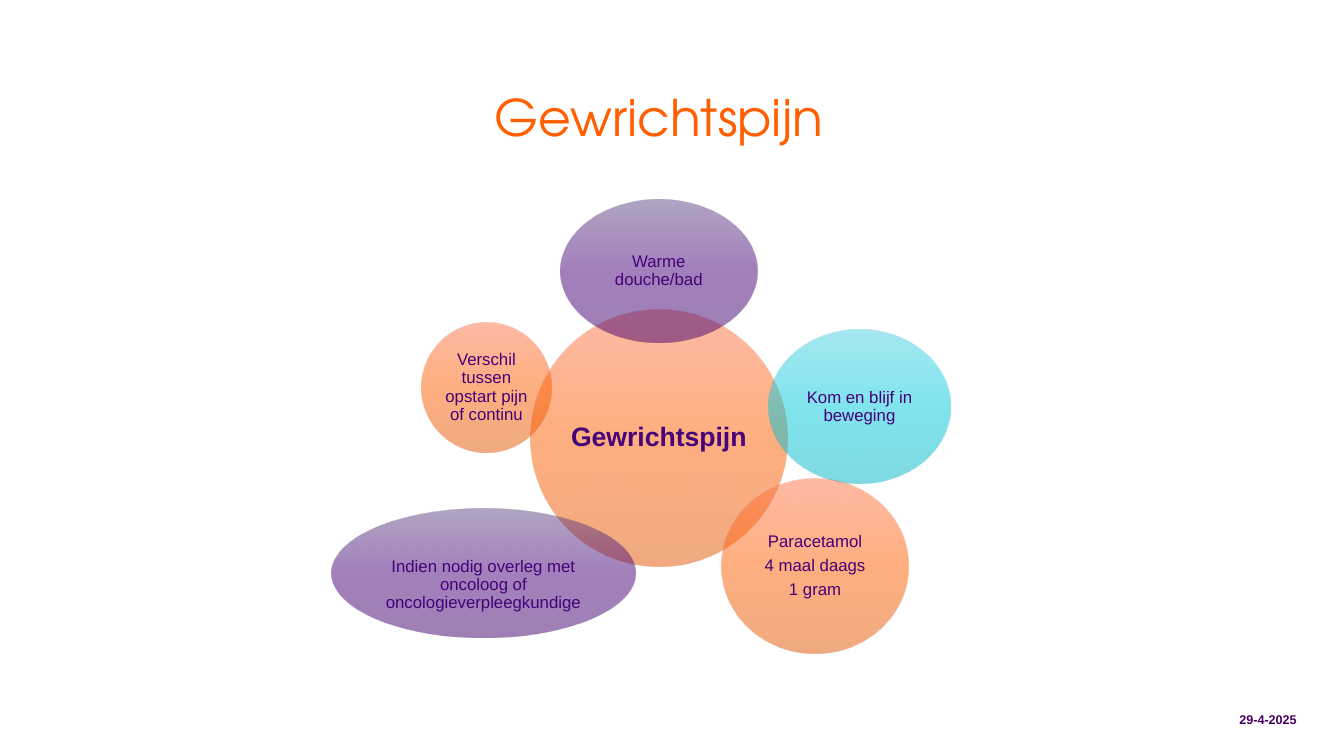
from lxml import etree
from pptx import Presentation
from pptx.dml.color import RGBColor
from pptx.enum.shapes import MSO_SHAPE
from pptx.enum.text import MSO_ANCHOR, PP_ALIGN
from pptx.oxml.ns import qn
from pptx.util import Inches, Pt

OVAL = MSO_SHAPE.OVAL
MIDDLE, TOP = MSO_ANCHOR.MIDDLE, MSO_ANCHOR.TOP
CENTER, RIGHT = PP_ALIGN.CENTER, PP_ALIGN.RIGHT

TITLE_ORANGE = RGBColor(0xFF, 0x5F, 0x00)
DATE_PURPLE = RGBColor(0x46, 0x00, 0x64)
TEXT_PURPLE = RGBColor(0x46, 0x00, 0x78)

# Gradient colours from top to bottom
ORANGE = (RGBColor(0xFF, 0x74, 0x4B), TITLE_ORANGE, RGBColor(0xE3, 0x54, 0x00))
PURPLE = (RGBColor(0x62, 0x4B, 0x88), TEXT_PURPLE, RGBColor(0x3E, 0x00, 0x6B))
CYAN = (RGBColor(0x4B, 0xD2, 0xE4), RGBColor(0x00, 0xCB, 0xDE), RGBColor(0x00, 0xB4, 0xC5))

SLIDE_W, SLIDE_H = 13.33, 7.5
BODY_FONT, TITLE_FONT = "Arial", "TeX Gyre Adventor"

# Circles around the centre: offset of the middle from the hub, size, colours, lines, top inset
HUB_SIZE = 2.55
ADVICE = [
    (0, -1.66, 1.95, 1.42, PURPLE, ["Warme douche/bad"], 0.02),
    (1.99, -0.31, 1.81, 1.53, CYAN, ["Kom en blijf in beweging"], 0.02),
    (1.55, 1.27, 1.86, 1.73, ORANGE, ["Paracetamol", "4 maal daags", "1 gram"], 0.02),
    (-1.74, 1.34, 3.02, 1.28, PURPLE,
     ["Indien nodig overleg met oncoloog of oncologieverpleegkundige"], 0.26),
    (-1.71, -0.5, 1.28, 1.28, ORANGE, ["Verschil tussen opstart pijn of continu"], 0.02),
]


def style_paragraph(paragraph, font_name, size, color, align, bold=False):
    paragraph.alignment = align
    font = paragraph.font
    font.name, font.size, font.bold = font_name, Pt(size), bold
    font.color.rgb = color


def add_label(slide, box, text, anchor, *style):
    label = slide.shapes.add_textbox(*map(Inches, box))
    frame = label.text_frame
    frame.word_wrap = True
    frame.vertical_anchor = anchor
    paragraph = frame.paragraphs[0]
    paragraph.text = text
    style_paragraph(paragraph, *style)
    return paragraph


def fill_translucent_gradient(shape, colors):
    shape.fill.gradient()
    shape.fill.gradient_angle = 270
    stops = shape.fill._fill._gradFill.find(qn("a:gsLst"))
    for stop in list(stops):
        stops.remove(stop)
    for index, color in enumerate(colors):
        stop = etree.SubElement(stops, qn("a:gs"), pos=str(index * 50000))
        rgb = etree.SubElement(stop, qn("a:srgbClr"), val=str(color))
        etree.SubElement(rgb, qn("a:alpha"), val="50000")


def add_circle(slide, center, size, colors, lines, font_size, inset, top_inset, bold=False):
    (x, y), (width, height) = center, size
    circle = slide.shapes.add_shape(
        OVAL, Inches(x - width / 2), Inches(y - height / 2), Inches(width), Inches(height))
    circle.shadow.inherit = False
    circle.line.fill.background()
    fill_translucent_gradient(circle, colors)

    frame = circle.text_frame
    frame.word_wrap = True
    frame.vertical_anchor = MIDDLE
    frame.margin_left = frame.margin_right = frame.margin_bottom = Inches(inset)
    frame.margin_top = Inches(top_inset)
    for index, line in enumerate(lines):
        paragraph = frame.add_paragraph() if index else frame.paragraphs[0]
        paragraph.text = line
        paragraph.line_spacing = 0.9
        paragraph.space_after = Pt(round(0.35 * font_size, 1))
        style_paragraph(paragraph, BODY_FONT, font_size, TEXT_PURPLE, CENTER, bold)


def add_title(slide, box):
    title = add_label(slide, box, "Gewrichtspijn", TOP, TITLE_FONT, 36, TITLE_ORANGE, CENTER)
    title.line_spacing = 0.9


def add_advice_wheel(slide, box):
    left, top, width, height = box
    hub_x, hub_y = left + width / 2, top + height / 2
    add_circle(slide, (hub_x, hub_y), (HUB_SIZE, HUB_SIZE), ORANGE,
               ["Gewrichtspijn"], 19, 0.03, 0.03, bold=True)
    for dx, dy, w, h, colors, lines, top_inset in ADVICE:
        add_circle(slide, (hub_x + dx, hub_y + dy), (w, h), colors, lines, 12, 0.02, top_inset)


def add_date(slide, box):
    add_label(slide, box, "29-4-2025", MIDDLE, BODY_FONT, 9, DATE_PURPLE, RIGHT, True)


def main():
    deck = Presentation()
    deck.slide_width, deck.slide_height = Inches(SLIDE_W), Inches(SLIDE_H)
    slide = deck.slides.add_slide(deck.slide_layouts[6])

    add_title(slide, (1.24, 0.87, 10.59, 0.49))
    add_advice_wheel(slide, (3.29, 1.98, 6.49, 4.73))
    add_date(slide, (11.69, 6.94, 1.27, 0.4))

    deck.save("out.pptx")


if __name__ == "__main__":
    main()
